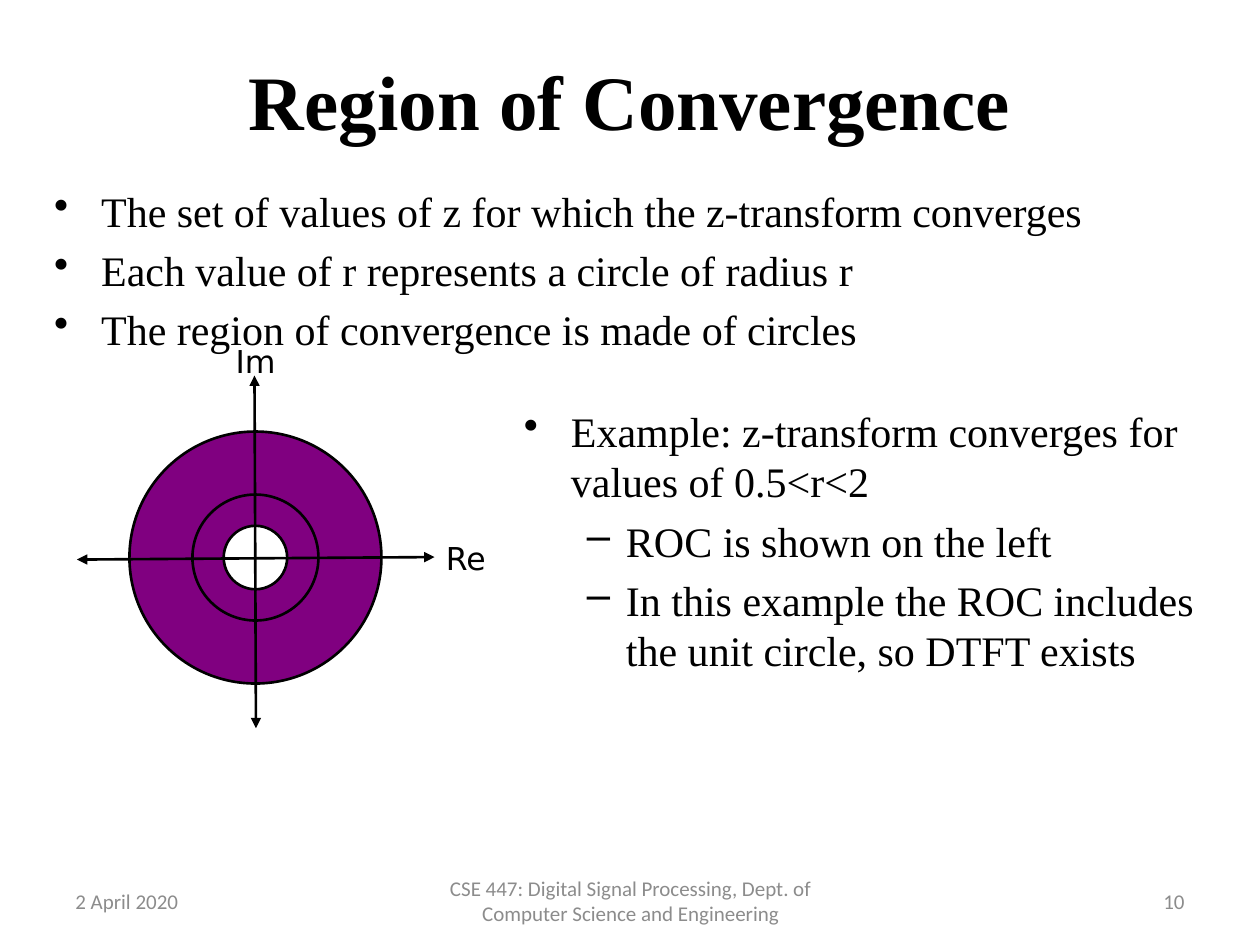
from dataclasses import dataclass

from lxml.etree import SubElement
from pptx import Presentation
from pptx.dml.color import RGBColor
from pptx.enum.shapes import MSO_CONNECTOR, MSO_SHAPE
from pptx.enum.text import MSO_ANCHOR, PP_ALIGN
from pptx.oxml.ns import qn
from pptx.util import Cm, Pt

BLACK, GRAY, WHITE, PURPLE = "000000", "8C8C8C", "FFFFFF", "800080"
SERIF, SANS, FOOT = "Times New Roman", "DejaVu Sans", "Calibri"


@dataclass
class Item:
    text: str
    mark: str = ""
    left: float = 0
    hang: float = 0


@dataclass
class Box:
    area: tuple
    items: list
    font: dict
    color: str = BLACK
    align: PP_ALIGN = PP_ALIGN.LEFT
    anchor: MSO_ANCHOR = MSO_ANCHOR.TOP


@dataclass
class Ring:
    radius: float
    fill: str = ""


@dataclass
class Axis:
    start: tuple
    end: tuple


def paint(target, code: str) -> None:
    target.rgb = RGBColor.from_string(code)


def apply(target, values: dict) -> None:
    for name, value in values.items():
        setattr(target, name, value)


def bullet(text: str) -> Item:
    return Item(text, "•", 0.95, 0.95)


def dash(text: str) -> Item:
    return Item(text, "–", 2.06, 0.79)


def face(name: str, size: int, bold: bool = False) -> dict:
    return {"name": name, "size": Pt(size), "bold": bold}


def add_box(slide, box: Box) -> None:
    frame = slide.shapes.add_textbox(*map(Cm, box.area)).text_frame
    apply(frame, {"word_wrap": True, "vertical_anchor": box.anchor})
    for index, item in enumerate(box.items):
        para = frame.paragraphs[0] if index == 0 else frame.add_paragraph()
        para.alignment = box.align
        if item.mark:
            para.space_before = Pt(5)
            props = para._p.get_or_add_pPr()
            props.set("marL", str(Cm(item.left)))
            props.set("indent", str(-Cm(item.hang)))
            SubElement(props, qn("a:buChar")).set("char", item.mark)
        run = para.add_run()
        run.text = item.text
        apply(run.font, box.font)
        paint(run.font.color, box.color)


def add_ring(slide, ring: Ring, center: tuple) -> None:
    left, top = (Cm(mid - ring.radius) for mid in center)
    side = Cm(2 * ring.radius)
    shape = slide.shapes.add_shape(MSO_SHAPE.OVAL, left, top, side, side)
    shape.shadow.inherit = False
    if ring.fill:
        shape.fill.solid()
        paint(shape.fill.fore_color, ring.fill)
    else:
        shape.fill.background()
    shape.line.width = Pt(1.5)
    paint(shape.line.color, BLACK)


def add_axis(slide, axis: Axis) -> None:
    ends = map(Cm, axis.start + axis.end)
    link = slide.shapes.add_connector(MSO_CONNECTOR.STRAIGHT, *ends)
    link.line.width = Pt(1.5)
    paint(link.line.color, BLACK)
    stroke = link.line._get_or_add_ln()
    for tag in ("a:headEnd", "a:tailEnd"):
        SubElement(stroke, qn(tag)).set("type", "triangle")
    SubElement(link._element.spPr, qn("a:effectLst"))


def foot(left: float, width: float, text: str, align: PP_ALIGN) -> Box:
    return Box((left, 17.65, width, 1.02), [Item(text)], face(FOOT, 12),
               GRAY, align, MSO_ANCHOR.MIDDLE)


BOXES = [
    foot(1.27, 5.92, "2 April 2020", PP_ALIGN.LEFT),
    foot(8.69, 8.05, "CSE 447: Digital Signal Processing, Dept. of "
         "Computer Science and Engineering", PP_ALIGN.CENTER),
    foot(18.21, 5.92, "10", PP_ALIGN.RIGHT),
    Box((1.27, 0.43, 22.86, 3.18), [Item("Region of Convergence")],
        face(SERIF, 44, True), BLACK, PP_ALIGN.CENTER, MSO_ANCHOR.MIDDLE),
    Box((0.84, 3.61, 23.93, 3.15), [
        bullet("The set of values of z for which the z-transform converges"),
        bullet("Each value of r represents a circle of radius r"),
        bullet("The region of convergence is made of circles"),
    ], face(SERIF, 24)),
    Box((10.31, 8.05, 14.45, 9.25), [
        bullet("Example: z-transform converges for values of 0.5<r<2"),
        dash("ROC is shown on the left"),
        dash("In this example the ROC includes the unit circle, "
             "so DTFT exists"),
    ], face(SERIF, 24)),
    Box((8.74, 10.74, 1.73, 1.02), [Item("Re")], face(SANS, 18)),
    Box((4.5, 6.78, 1.68, 1.02), [Item("Im")], face(SANS, 18)),
]
CENTER = (5.15, 11.24)
RINGS = [Ring(2.54, PURPLE), Ring(1.27), Ring(0.64, WHITE)]
AXES = [Axis((1.55, 11.28), (8.76, 11.23)),
        Axis((5.16, 14.68), (5.13, 7.57))]


def main() -> None:
    deck = Presentation()
    apply(deck, {"slide_width": Cm(25.4), "slide_height": Cm(19.05)})
    slide = deck.slides.add_slide(deck.slide_layouts[6])
    for box in BOXES:
        add_box(slide, box)
    for ring in RINGS:
        add_ring(slide, ring, CENTER)
    for axis in AXES:
        add_axis(slide, axis)
    deck.save("out.pptx")


if __name__ == "__main__":
    main()
